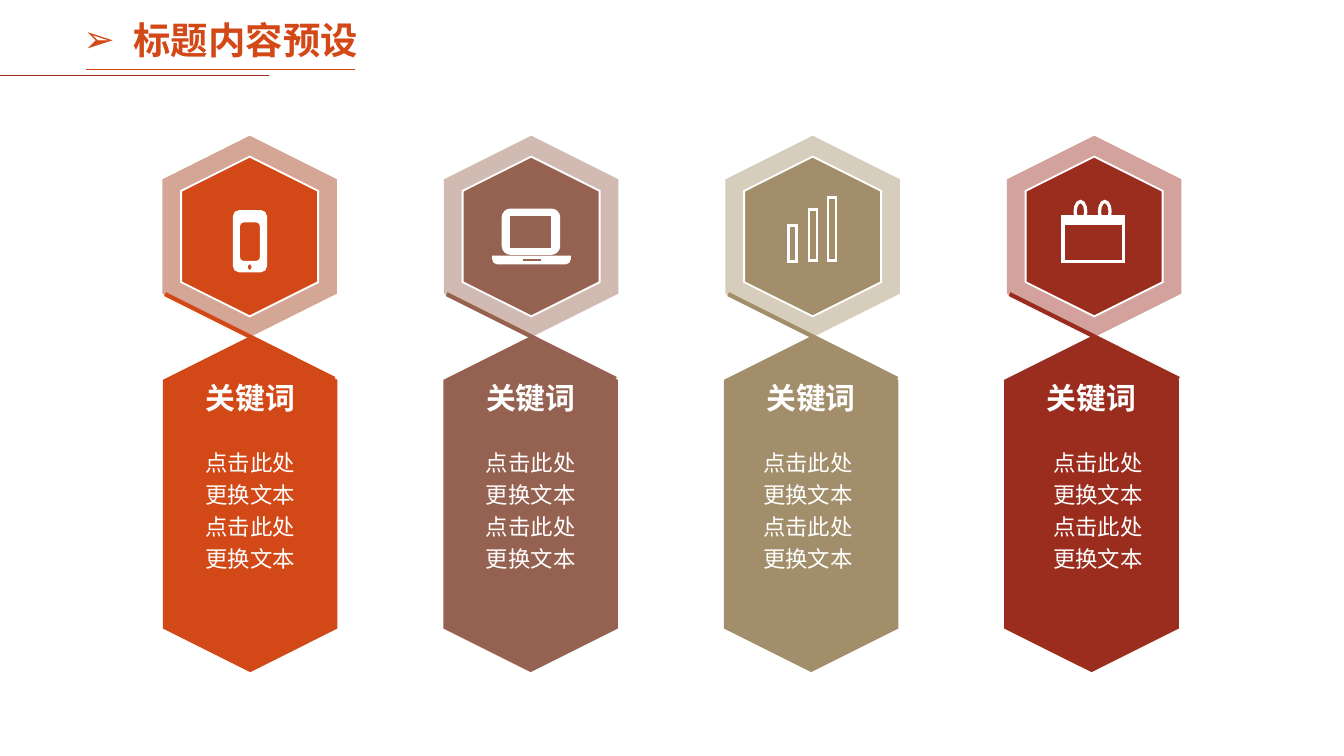
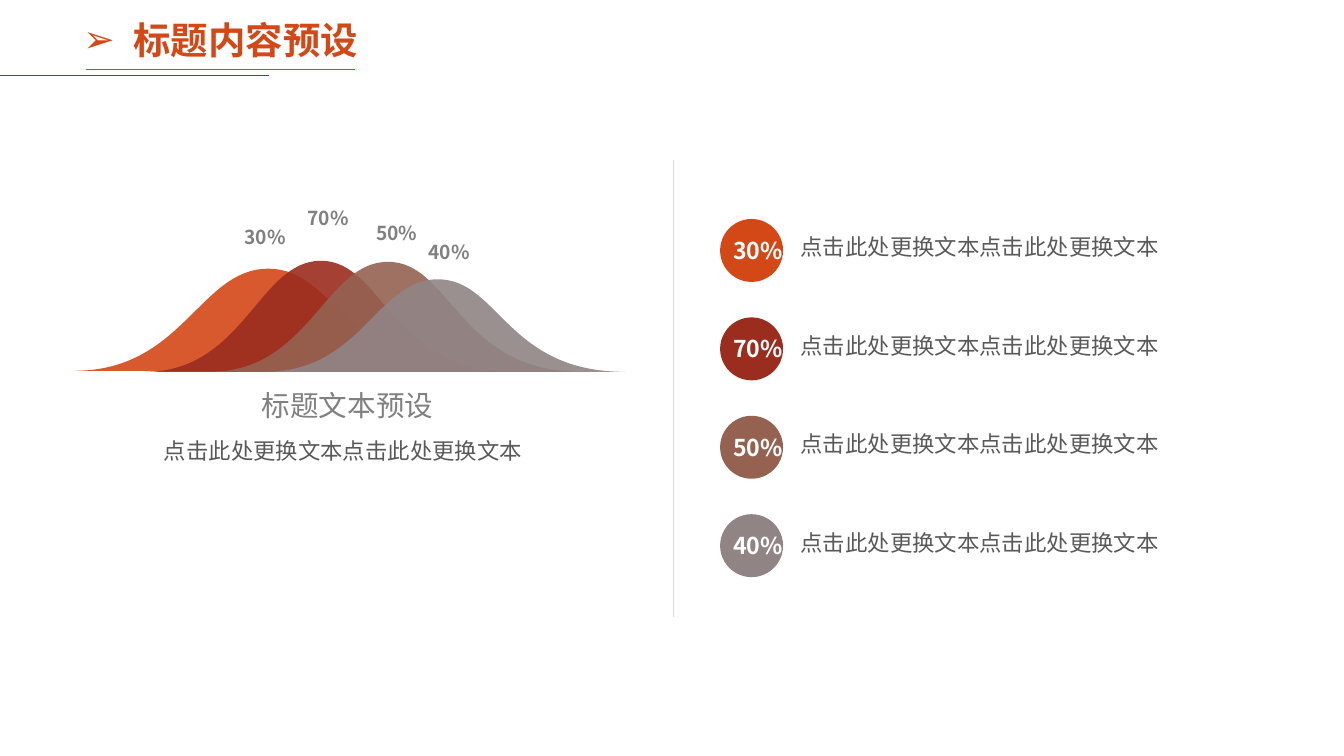
from lxml import etree
from pptx import Presentation
from pptx.dml.color import RGBColor
from pptx.enum.shapes import MSO_CONNECTOR, MSO_SHAPE
from pptx.enum.text import MSO_ANCHOR, MSO_AUTO_SIZE, PP_ALIGN
from pptx.oxml.ns import qn
from pptx.util import Cm, Pt

HEX, OVAL, RECT = MSO_SHAPE.HEXAGON, MSO_SHAPE.OVAL, MSO_SHAPE.RECTANGLE
PROCESS = MSO_SHAPE.FLOWCHART_PROCESS
STRAIGHT = MSO_CONNECTOR.STRAIGHT
LEFT, MID = PP_ALIGN.LEFT, PP_ALIGN.CENTER

FONT = "Noto Sans CJK SC"
COLORS = {
    "orange": "D34817", "rust": "9E3611", "red": "9B2D1F", "brown": "956251",
    "sand": "A28E6A", "mauve": "918485", "white": "FFFFFF", "dark": "595959",
    "gray": "808080", "pale": "D9D9D9",
}

TITLE = "标题内容预设"
KEYWORD = "关键词"
BODY = "点击此处更换文本点击此处更换文本"
CAPTION = "标题文本预设"

# Lengths are centimetres. Icon boxes: x, y, width, height, top and bottom
# corner radius, measured from the centre of the badge.
PHONE = [(-.3, -.48, .61, 1.14, .1, .1), (-.2, -.28, .41, .76, .08, .08),
         (-.05, .51, .1, .14, .05, .05), (-.12, -.41, .23, .03, 0, 0)]
LAPTOP = [(-.72, .38, 1.45, .13, 0, .08), (-.18, .41, .38, .08, 0, 0),
          (-.54, -.51, 1.07, .84, .15, .15), (-.41, -.41, .81, .64, 0, 0)]
BARS = [(-.45, -.2, .15, .68, 0, 0), (-.07, -.51, .15, .97, 0, 0),
        (.29, -.74, .15, 1.2, 0, 0)]
CALENDAR = [(OVAL, .1, -.66, .2, .38, None, 1.75),
            (PROCESS, -.59, -.38, 1.14, .86, None, 1.75),
            (OVAL, -.36, -.66, .2, .38, None, 1.75),
            (RECT, -.59, -.38, 1.14, .15, "white", 1)]

# Colour, halo colour, shift of the body text
COLUMNS = [("orange", "rust", 0), ("brown", "brown", 0),
           ("sand", "sand", -.06), ("red", "red", .12)]

# Share, colour, hill (x, y, width, height), label (x, y)
SHARES = [
    ("30%", "orange", (1.4, 5.08, 7.65, 1.93), (4.37, 4.14)),
    ("70%", "red", (2.74, 4.93, 6.93, 2.1), (5.56, 3.78)),
    ("50%", "brown", (3.96, 4.95, 7.03, 2.08), (6.86, 4.06)),
    ("40%", "mauve", (5, 5.28, 6.82, 1.75), (7.85, 4.42)),
]
# Start, then segments: one point is a line, three points are a curve
HILL = [[(0, 1)], [(.27, 1), (.31, 0), (.48, 0)],
        [(.65, 0), (.67, 1), (1, 1)], [(0, 1)]]


def rgb(name):
    return RGBColor.from_string(COLORS[name])


def paint(shape, fill=None, line=None, width=1, alpha=None):
    shape.shadow.inherit = False
    if fill:
        shape.fill.solid()
        shape.fill.fore_color.rgb = rgb(fill)
        if alpha:
            tone = shape.fill._xPr.find(".//" + qn("a:srgbClr"))
            etree.SubElement(tone, qn("a:alpha")).set("val", str(alpha * 1000))
    else:
        shape.fill.background()
    if line:
        shape.line.color.rgb = rgb(line)
        shape.line.width = Pt(width)
        edge = shape._element.spPr.find(qn("a:ln"))
        etree.SubElement(edge, qn("a:miter")).set("lim", "800000")
    else:
        shape.line.fill.background()
    return shape


def add(host, kind, x, y, w, h, **look):
    return paint(host.add_shape(kind, Cm(x), Cm(y), Cm(w), Cm(h)), **look)


def badge(host, cx, cy, w, h, **look):
    """Add a hexagon that stands on its tip, centred on cx, cy."""
    add(host, HEX, cx - w / 2, cy - h / 2, w, h, **look).rotation = 270


def rule(host, x1, y1, x2, y2, color, width):
    line = host.add_connector(STRAIGHT, Cm(x1), Cm(y1), Cm(x2), Cm(y2))
    line.line.color.rgb = rgb(color)
    line.line.width = Pt(width)
    etree.SubElement(line._element.spPr, qn("a:effectLst"))


def outline(host, loops, **look):
    """Add one freeform of closed loops, each a start and its segments."""
    pen = None
    for loop in loops:
        points = [(Cm(x), Cm(y)) for part in loop for x, y in part]
        if pen:
            pen.move_to(*points[0])
        else:
            pen = host.build_freeform(*points[0])
        pen.add_line_segments(points[1:], close=True)
    shape = pen.convert_to_shape()
    steps = iter(list(shape._element.iter(qn("a:lnTo"))))
    for loop in loops:
        for part in loop[1:]:
            first, *rest = [next(steps) for _ in part]
            if rest:
                bend = etree.Element(qn("a:cubicBezTo"))
                first.addprevious(bend)
                for step in (first, *rest):
                    bend.append(step[0])
                    step.getparent().remove(step)
    return paint(shape, **look)


def rounded(x, y, w, h, top, low):
    """Return the loop of a box with round top and bottom corners."""
    right, base = x + w, y + h
    spots = [(right, y, top, 1, 0, 0, 1), (right, base, low, 0, 1, -1, 0),
             (x, base, low, -1, 0, 0, -1), (x, y, top, 0, -1, 1, 0)]
    loop = [[(x + top, y)]]
    for px, py, r, ax, ay, bx, by in spots:
        loop.append([(px - r * ax, py - r * ay)])
        if r:
            k = .45 * r
            loop.append([(px - k * ax, py - k * ay),
                         (px + k * bx, py + k * by),
                         (px + r * bx, py + r * by)])
    return loop if top else loop[:-1] 


def icon(host, cx, cy, boxes, **look):
    loops = [rounded(cx + x, cy + y, *rest) for x, y, *rest in boxes]
    outline(host, loops, line="white", **look)


def write(frame, words, size, color, bold=False, align=LEFT, space=None):
    para = frame.paragraphs[0]
    para.alignment = align
    if space:
        para.line_spacing = space
    run = para.add_run()
    run.text = words
    run.font.size = Pt(size)
    run.font.bold = bold
    run.font.name = FONT
    run.font.color.rgb = rgb(color)
    east = etree.SubElement(run.font._element, qn("a:ea"))
    east.set("typeface", FONT)
    return para


def text(host, x, y, w, h, *words, wrap=True, sides=(.25, .25), **style):
    frame = host.add_textbox(Cm(x), Cm(y), Cm(w), Cm(h)).text_frame
    frame.word_wrap = wrap
    frame.margin_left, frame.margin_right = map(Cm, sides)
    write(frame, *words, **style)


def start(deck):
    """Add a slide with the shared title and its two rules."""
    slide = deck.slides.add_slide(deck.slide_layouts[5])
    title = slide.shapes.title
    title.left, title.top = Cm(1.32), Cm(.2)
    title.width, title.height = Cm(6.76), Cm(1.12)
    frame = title.text_frame
    frame.auto_size = MSO_AUTO_SIZE.SHAPE_TO_FIT_TEXT
    frame.vertical_anchor = MSO_ANCHOR.TOP
    props = write(frame, TITLE, 20, "orange", bold=True)._p.get_or_add_pPr()
    props.set("marL", str(Cm(.95)))
    props.set("indent", str(-Cm(.95)))
    etree.SubElement(props, qn("a:buFont")).set("typeface", "Arial")
    etree.SubElement(props, qn("a:buChar")).set("char", "➢")
    rule(slide.shapes, 1.63, 1.32, 6.71, 1.32, "orange", .5)
    rule(slide.shapes, 0, 1.42, 5.08, 1.42, "red", .5)
    return slide.shapes


def keywords(deck):
    page = start(deck)
    top = 4.47
    for i, (color, halo, shift) in enumerate(COLUMNS):
        host = page.add_group_shape().shapes
        cx, mid = 4.72 + 5.32 * i, 4.73 + 5.3 * i
        badge(host, mid, 9.53, 6.35, 3.3, fill=color)
        badge(host, cx, top, 3.81, 3.3, fill=halo, alpha=44)
        badge(host, cx, top, 3.02, 2.59, fill=color, line="white")
        rule(host, cx - 1.6, 5.56, cx + 1.6, 7.16, color, 2.25)
        if i == 0:
            icon(host, cx, top, PHONE, fill="white")
        elif i == 1:
            icon(host, cx, top, LAPTOP, fill="white")
        elif i == 2:
            icon(host, cx, top, BARS, width=1.5)
        else:
            for kind, x, y, w, h, fill, width in CALENDAR:
                add(host, kind, cx + x, top + y, w, h,
                    fill=fill, line="white", width=width)
        text(host, mid - 1.32, 7.06, 2.64, .64, KEYWORD, 16, "white",
             bold=True, align=MID, wrap=False)
        text(host, mid + shift - 1.22, 8.26, 2.44, 2.72, BODY, 12, "white",
             align=MID, space=1.2)


def shares(deck):
    page = start(deck)
    rows = page.add_group_shape().shapes
    for i, (share, color, _, _) in enumerate(SHARES):
        y = 4.14 + 1.86 * i
        text(rows, 14.88, y + .05, 8.53, 1.09, BODY, 12, "dark", space=1.2)
        add(rows, OVAL, 13.61, y, 1.19, 1.19, fill=color)
        text(rows, 13.61, y + .2, 1.24, .71, share, 12.4, "white",
             bold=True, wrap=False, sides=(.25, 0))

    left = page.add_group_shape().shapes
    rule(left, 12.72, 3.02, 12.72, 11.66, "pale", .5)
    text(left, .86, 8.03, 11.25, 1.09, BODY, 12, "dark", align=MID, space=1.2)
    text(left, 4.93, 7.21, 3.28, .76, CAPTION, 15.3, "gray", align=MID,
         wrap=False, sides=(0, 0))
    for _, color, (x, y, w, h), _ in SHARES:
        hill = [[(x + w * u, y + h * v) for u, v in part] for part in HILL]
        outline(left, [hill], fill=color, alpha=90)
    for share, _, _, (x, y) in SHARES:
        text(left, x, y, 1.09, .61, share, 10.3, "gray", bold=True,
             wrap=False, sides=(.25, 0))


def main():
    deck = Presentation()
    deck.slide_width, deck.slide_height = Cm(25.4), Cm(14.29)
    keywords(deck)
    shares(deck)
    deck.save("out.pptx")


if __name__ == "__main__":
    main()
